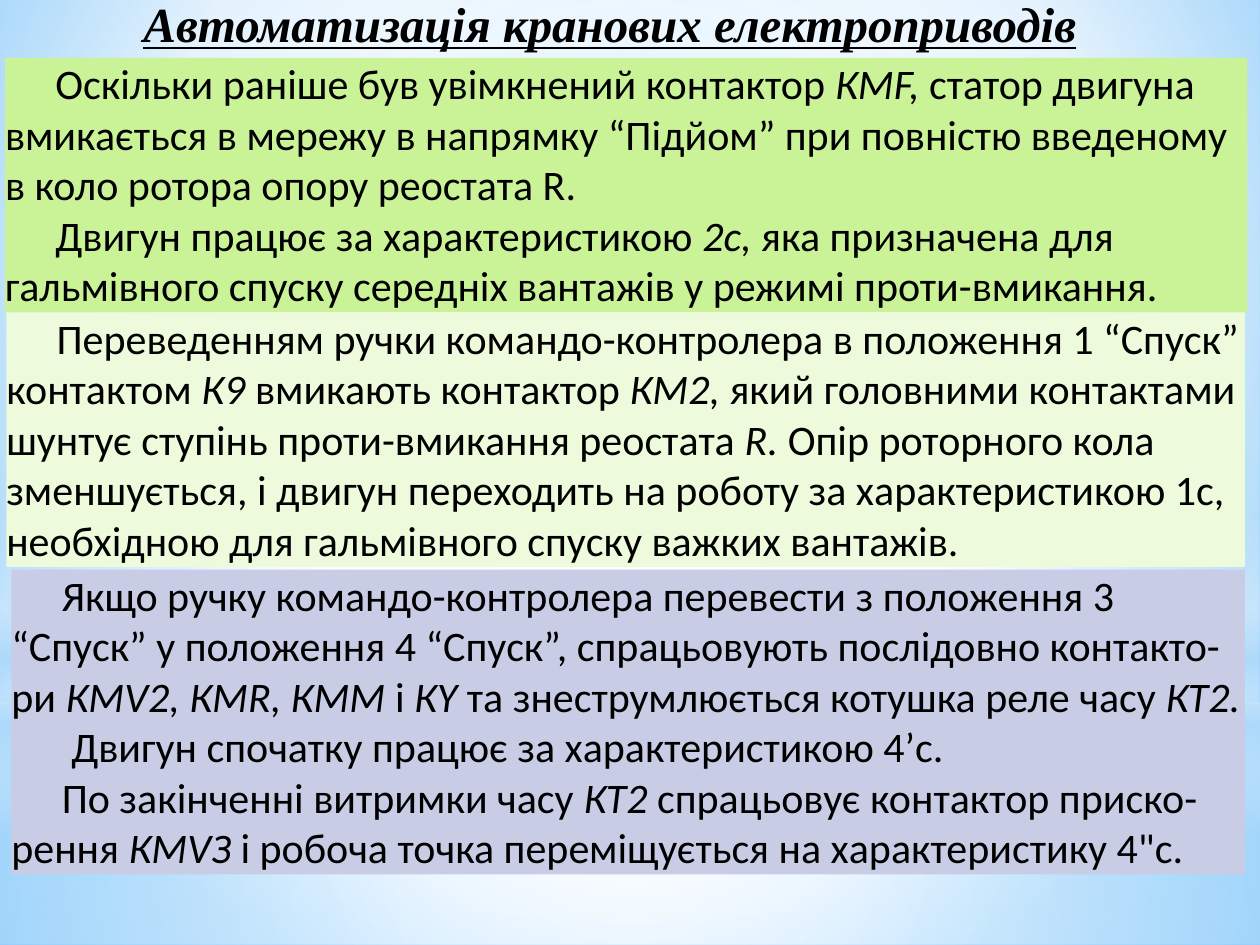
"""Build a slide on the automation of crane electric drives."""
from lxml import etree
from pptx import Presentation
from pptx import util as u
from pptx.dml.color import RGBColor
from pptx.enum import shapes, text
from pptx.oxml.ns import qn

BLACK = RGBColor(0x00, 0x00, 0x00)
GREEN = RGBColor(0xCA, 0xF2, 0x97)
PALE_GREEN = RGBColor(0xED, 0xFB, 0xDC)
LAVENDER = RGBColor(0xC8, 0xCD, 0xE5)
WHITE = RGBColor(0xFF, 0xFF, 0xFF)
SKY = RGBColor(0xB4, 0xDC, 0xFA)
LIGHT_BLUE = RGBColor(0x9E, 0xD5, 0xFF)
BLUE = RGBColor(0x5B, 0xB9, 0xFF)

TITLE = "Автоматизація кранових електроприводів"
BLOCKS = [
    ((0.04, 0.46, 9.86, 2.02), GREEN, [
        "Оскільки раніше був увімкнений контактор *КМF,* статор двигуна вмикається в мережу "
        "в напрямку “Підйом” при повністю введеному в коло ротора опору реостата R.",
        "Двигун працює за характеристикою *2с,* яка призначена для гальмівного спуску "
        "середніх вантажів у режимі проти-вмикання.",
    ]),
    ((0.05, 2.48, 9.83, 2.02), PALE_GREEN, [
        "Переведенням ручки командо-контролера в положення 1 “Спуск” контактом *К9* вмикають "
        "контактор *КМ2,* який головними контактами шунтує ступінь проти-вмикання реостата "
        "*R.* Опір роторного кола зменшується, і двигун переходить на роботу за "
        "характеристикою 1с, необхідною для гальмівного спуску важких вантажів.",
    ]),
    ((0.09, 4.52, 9.79, 2.42), LAVENDER, [
        "Якщо ручку командо-контролера перевести з положення 3 “Спуск” у положення 4 “Спуск”, "
        "спрацьовують послідовно контакто-ри *КМV2, КМR, КММ* і *КY *та знеструмлюється "
        "котушка реле часу *КТ2.*",
        " Двигун спочатку працює за характеристикою 4’с.",
        "По закінченні витримки часу *КТ2* спрацьовує контактор приско-рення *КМVЗ* і робоча "
        "точка переміщується на характеристику 4\"с.",
    ]),
]

RECT, OVAL = shapes.MSO_SHAPE.RECTANGLE, shapes.MSO_SHAPE.OVAL
CENTRE = (50, 50, 50, 50)
BACKDROP = [(0, LIGHT_BLUE, 100), (60, WHITE, 100), (100, BLUE, 100)]
GLOWS = [
    (RECT, (0, 5.58, 10, 1.92), [(0, WHITE, 91), (37, WHITE, 76), (100, SKY, 79)], CENTRE),
    (RECT, (0, 0, 10, 5.58), [(0, WHITE, 89), (48, WHITE, 62), (100, SKY, 79)], CENTRE),
    (RECT, (0, 4.12, 10, 2.5), [(0, WHITE, 0), (29, WHITE, 30), (45, SKY, 40),
                                (55, WHITE, 26), (65, SKY, 60), (100, WHITE, 0)], None),
    (OVAL, (0, 1.75, 10, 5.58), [(0, WHITE, 100), (56, WHITE, 0)], CENTRE),
]


def set_gradient(fill, props, stops, focus):
    fill.solid()
    grad = etree.Element(qn("a:gradFill"), rotWithShape="1")
    stop_list = etree.SubElement(grad, qn("a:gsLst"))
    for pos, color, opacity in stops:
        gs = etree.SubElement(stop_list, qn("a:gs"), pos=str(pos * 1000))
        clr = etree.SubElement(gs, qn("a:srgbClr"), val=str(color))
        if opacity < 100:
            etree.SubElement(clr, qn("a:alpha"), val=str(opacity * 1000))
    if focus:
        circle = etree.SubElement(grad, qn("a:path"), path="circle")
        sides = {side: str(v * 1000) for side, v in zip("ltrb", focus)}
        etree.SubElement(circle, qn("a:fillToRect"), **sides)
    else:
        etree.SubElement(grad, qn("a:lin"), ang="5400000", scaled="0")
    props.replace(props.find(qn("a:solidFill")), grad)


def add_plain_shape(s, kind, box):
    sp = s.shapes.add_shape(kind, *map(u.Inches, box))
    sp.shadow.inherit = False
    sp.line.fill.background()
    return sp


def prepare_frame(tf):
    tf.margin_left = tf.margin_top = tf.margin_right = tf.margin_bottom = 0
    tf.word_wrap = True
    tf.auto_size = text.MSO_AUTO_SIZE.SHAPE_TO_FIT_TEXT
    tf.vertical_anchor = text.MSO_ANCHOR.TOP


def format_run(r, name, size, italic):
    r.font.name, r.font.size, r.font.italic = name, u.Pt(size), italic
    r.font.color.rgb = BLACK


def add_block(s, box, color, paragraphs):
    sp = add_plain_shape(s, RECT, box)
    sp.fill.solid()
    sp.fill.fore_color.rgb = color
    tf = sp.text_frame
    prepare_frame(tf)
    for i, line in enumerate(paragraphs):
        p = tf.add_paragraph() if i else tf.paragraphs[0]
        p.alignment = text.PP_ALIGN.LEFT
        p._p.get_or_add_pPr().set("indent", str(u.Inches(0.4)))
        for j, part in enumerate(line.split("*")):
            if part:
                r = p.add_run()
                r.text = part
                format_run(r, "Calibri", 24, j % 2 == 1)


def set_title(s):
    sp = s.shapes.title
    sp.left, sp.top, sp.width, sp.height = map(u.Inches, (0.59, 0.02, 8.5, 0.4))
    tf = sp.text_frame
    tf.text = TITLE
    prepare_frame(tf)
    p = tf.paragraphs[0]
    p.alignment, p.line_spacing = text.PP_ALIGN.CENTER, 0.85
    r = p.runs[0]
    format_run(r, "Times New Roman", 28, True)
    r.font.bold = r.font.underline = True
    sp.element.getparent().append(sp.element)


def main():
    prs = Presentation()
    prs.slide_width, prs.slide_height = u.Inches(10), u.Inches(7.5)
    s = prs.slides.add_slide(prs.slide_layouts[5])
    fill = s.background.fill
    fill.solid()
    set_gradient(fill, s.element.xpath(".//p:bgPr")[0], BACKDROP, (20, 10, 20, 60))
    for kind, box, stops, focus in GLOWS:
        sp = add_plain_shape(s, kind, box)
        set_gradient(sp.fill, sp.element.spPr, stops, focus)
    for block in BLOCKS:
        add_block(s, *block)
    set_title(s)
    prs.save("out.pptx")


if __name__ == "__main__":
    main()
